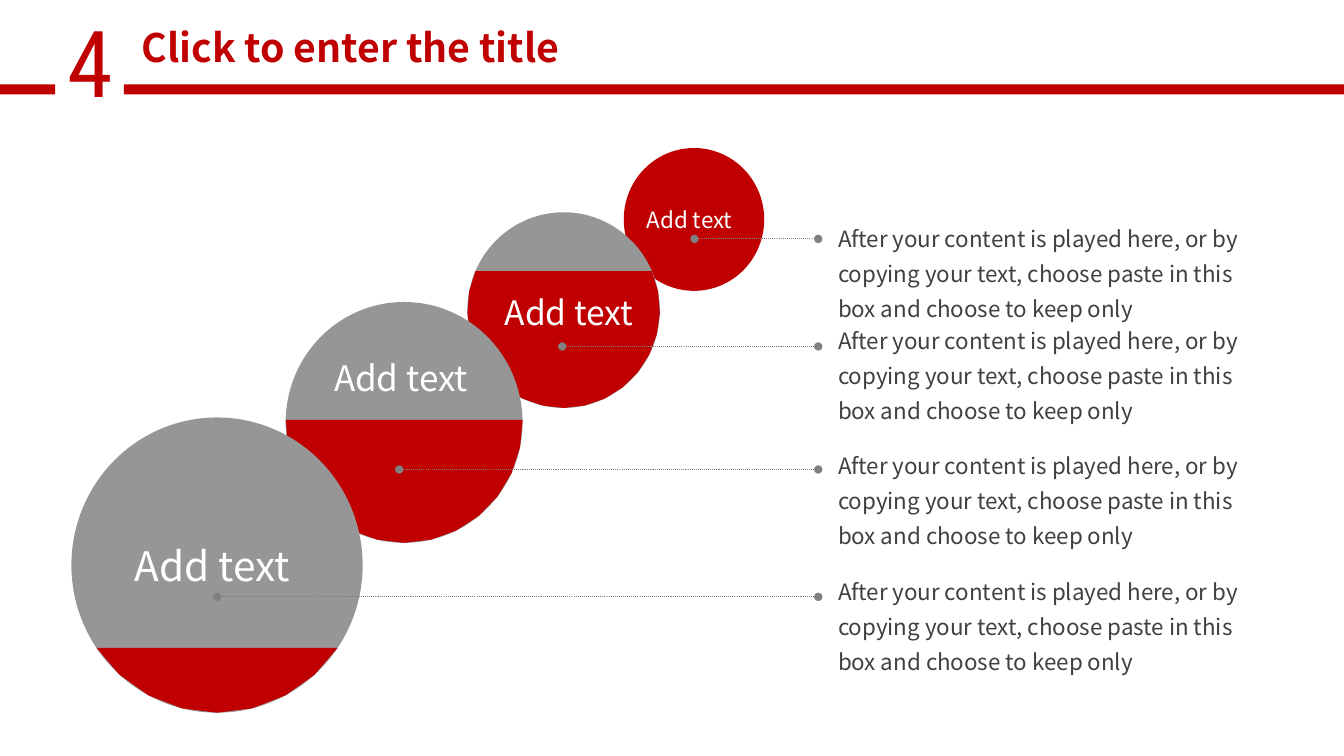
from dataclasses import dataclass
from math import asin, cos, pi, radians, sin

from lxml import etree
from pptx import Presentation
from pptx.dml.color import RGBColor
from pptx.enum.dml import MSO_LINE
from pptx.enum.shapes import MSO_CONNECTOR, MSO_SHAPE
from pptx.enum.text import MSO_ANCHOR, MSO_AUTO_SIZE, PP_ALIGN
from pptx.oxml.ns import qn
from pptx.util import Cm, Pt

RECT, OVAL = MSO_SHAPE.RECTANGLE, MSO_SHAPE.OVAL
STRAIGHT = MSO_CONNECTOR.STRAIGHT
DOTTED = MSO_LINE.ROUND_DOT
TOP, MIDDLE = MSO_ANCHOR.TOP, MSO_ANCHOR.MIDDLE
LEFT, CENTER = PP_ALIGN.LEFT, PP_ALIGN.CENTER
GROW = MSO_AUTO_SIZE.SHAPE_TO_FIT_TEXT


@dataclass(frozen=True)
class Theme:
    red: str = "C00000"
    gray: str = "969696"
    line: str = "808080"
    body: str = "404040"
    white: str = "FFFFFF"
    sans: str = "Noto Sans CJK SC"
    condensed: str = "Roboto Condensed"
    number_size: int = 66
    title_size: int = 28
    body_size: int = 16
    label_sizes: tuple = (16, 24, 25, 29)
    line_width: float = 0.75


@dataclass(frozen=True)
class Stage:
    circle: tuple
    red_from: float
    label: tuple
    leader: tuple
    note_y: float


THEME = Theme()
NOTE = ("After your content is played here, or by copying your text, "
        "choose paste in this box and choose to keep only")
STAGES = [
    Stage((15.72, 3.73, 3.54, 3.6), 0, (0.33, 1.32, 2.82, 0.97), (1.78, 2.29), 5.35),
    Stage((11.78, 5.35, 4.85, 4.93), 0.3, (0.69, 1.86, 3.96, 1.3), (2.39, 3.38), 7.92),
    Stage((7.2, 7.61, 5.97, 6.07), 0.49, (0.97, 1.23, 4.09, 1.35), (2.86, 4.22), 11.07),
    Stage((1.8, 10.52, 7.34, 7.44), 0.78, (1.34, 2.97, 4.67, 1.5), (3.67, 4.52), 14.25),
]


def set_all(target, values):
    for name, value in values.items():
        setattr(target, name, value)


def paint(sp, color):
    sp.shadow.inherit = False
    sp.fill.solid()
    sp.fill.fore_color.rgb = RGBColor.from_string(color)
    sp.line.fill.background()


def add_solid(slide, kind, box, color):
    paint(slide.shapes.add_shape(kind, *map(Cm, box)), color)


def add_text(slide, box, text, size, color, font=THEME.sans, bold=False,
             align=LEFT, anchor=TOP, wrap=True, spacing=None):
    tf = slide.shapes.add_textbox(*map(Cm, box)).text_frame
    set_all(tf, {"word_wrap": wrap, "auto_size": GROW, "vertical_anchor": anchor})
    p = tf.paragraphs[0]
    set_all(p, {"alignment": align, "line_spacing": spacing})
    r = p.add_run()
    r.text = text
    set_all(r.font, {"name": font, "size": Pt(size), "bold": bold})
    r.font.color.rgb = RGBColor.from_string(color)


def add_header(slide, box):
    x, y, w, h = box
    bar = 0.25
    bar_y = y + h - bar
    gap_left, gap_right = x + 1.39, x + 3.12
    add_text(slide, (x + 1.45, y, 0.86, 3.07), "4", THEME.number_size, THEME.red,
             THEME.condensed)
    add_solid(slide, RECT, (gap_right, bar_y, w - gap_right, bar), THEME.red)
    add_solid(slide, RECT, (x, bar_y, gap_left - x, bar), THEME.red)
    add_text(slide, (x + 3.13, y + 0.46, 11.4, 1.45), "Click to enter the title",
             THEME.title_size, THEME.red, bold=True, align=CENTER)


def add_circle(slide, box, red_from):
    if red_from == 0:
        add_solid(slide, OVAL, box, THEME.red)
        return
    add_solid(slide, OVAL, box, THEME.gray)
    x, y, w, h = box
    start = asin(2 * red_from - 1)
    sweep = pi - 2 * start
    steps = 2 * round(sweep / radians(26))
    angles = [start + sweep * i / steps for i in range(steps + 1)]
    points = [(Cm(x + w / 2 * (1 + cos(a))), Cm(y + h / 2 * (1 + sin(a))))
              for a in angles]
    fb = slide.shapes.build_freeform(*points[0])
    fb.add_line_segments(points[1:], close=True)
    paint(fb.convert_to_shape(), THEME.red)


def add_leader(slide, start, end):
    sp = slide.shapes.add_connector(STRAIGHT, *map(Cm, start + end))
    set_all(sp.line, {"width": Pt(THEME.line_width), "dash_style": DOTTED})
    sp.line.color.rgb = RGBColor.from_string(THEME.line)
    props = sp._element.spPr
    ln = props.find(qn("a:ln"))
    for tag in ("a:headEnd", "a:tailEnd"):
        etree.SubElement(ln, qn(tag), type="oval")
    etree.SubElement(props, qn("a:effectLst"))


def add_stages(slide, box):
    left, top, width, _ = box
    note_w, note_h = 11.23, 2.13
    note_x = left + width - note_w
    for stage in STAGES:
        x, y, w, h = stage.circle
        add_circle(slide, (left + x, top + y, w, h), stage.red_from)
    for stage, size in zip(STAGES, THEME.label_sizes):
        x, y = left + stage.circle[0], top + stage.circle[1]
        dx, dy, w, h = stage.label
        add_text(slide, (x + dx, y + dy, w, h), "Add text", size, THEME.white,
                 anchor=MIDDLE, wrap=False)
        dot_x, dot_y = x + stage.leader[0], y + stage.leader[1]
        add_leader(slide, (dot_x, dot_y), (note_x - 0.25, dot_y))
        add_text(slide, (note_x, top + stage.note_y, note_w, note_h), NOTE,
                 THEME.body_size, THEME.body, spacing=1.3)


def main():
    prs = Presentation()
    set_all(prs, {"slide_width": Cm(33.87), "slide_height": Cm(19.05)})
    slide = prs.slides.add_slide(prs.slide_layouts[6])
    add_header(slide, (0, 0, 33.87, 2.38))
    add_stages(slide, (0, 0, 32.1, 19.05))
    prs.save("out.pptx")


if __name__ == "__main__":
    main()
